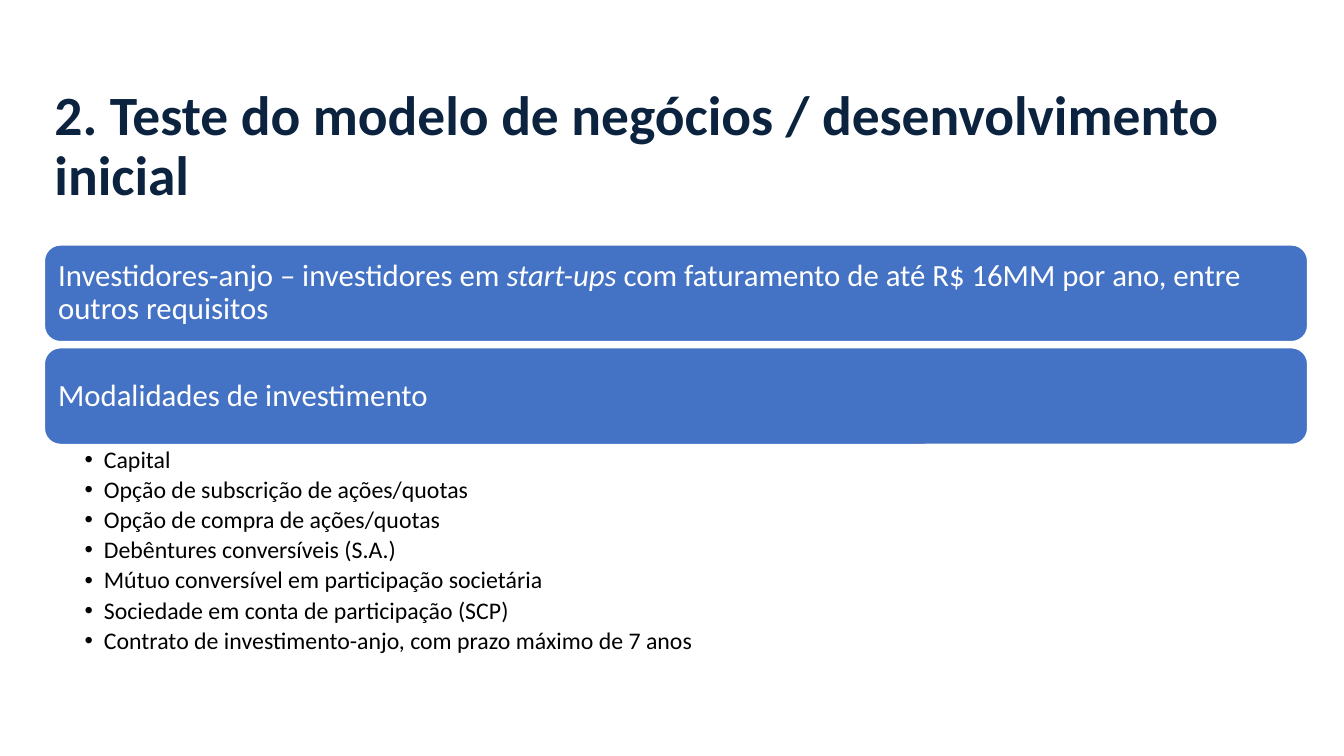
from dataclasses import dataclass

from lxml.etree import SubElement
from pptx import Presentation
from pptx.dml.color import RGBColor
from pptx.enum.shapes import MSO_SHAPE as Preset
from pptx.enum.text import MSO_ANCHOR as Anchor, MSO_AUTO_SIZE as AutoSize, PP_ALIGN as Align
from pptx.oxml.ns import qn
from pptx.util import Inches, Pt

FONT = "Calibri"
NAVY, BLUE, WHITE, BLACK = "0B233F", "4472C4", "FFFFFF", "000000"
LEFT, WIDTH = 0.44, 12.53
BAR_TOP, BAR_HEIGHT, BAR_STEP = 2.43, 0.96, 1.02

TITLE = "2. Teste do modelo de negócios / desenvolvimento inicial"
MODALITIES = [
    "Capital",
    "Opção de subscrição de ações/quotas",
    "Opção de compra de ações/quotas",
    "Debêntures conversíveis (S.A.)",
    "Mútuo conversível em participação societária",
    "Sociedade em conta de participação (SCP)",
    "Contrato de investimento-anjo, com prazo máximo de 7 anos",
]


@dataclass
class Span:
    text: str
    italic: bool = False


BARS = [
    [
        Span("Investidores-anjo – investidores em "),
        Span("start-ups", italic=True),
        Span(" com faturamento de até R$ 16MM por ano, entre outros requisitos"),
    ],
    [Span("Modalidades de investimento")],
]


def color(value: str) -> RGBColor:
    return RGBColor.from_string(value)


def place(shape, top: float, height: float) -> None:
    shape.left, shape.top = Inches(LEFT), Inches(top)
    shape.width, shape.height = Inches(WIDTH), Inches(height)


def set_frame(frame, anchor: Anchor, left: float, top: float, right: float, bottom: float) -> None:
    frame.word_wrap = True
    frame.auto_size = AutoSize.NONE
    frame.vertical_anchor = anchor
    frame.margin_left, frame.margin_right = Inches(left), Inches(right)
    frame.margin_top, frame.margin_bottom = Inches(top), Inches(bottom)


def style(para, size: float, text_color: str, after: float = 0, bold: bool = False) -> None:
    para.alignment = Align.LEFT
    para.line_spacing = 0.9
    para.space_before, para.space_after = Pt(0), Pt(after)
    para.font.name, para.font.size, para.font.bold = FONT, Pt(size), bold
    para.font.color.rgb = color(text_color)


def add_bullet(para, indent: float) -> None:
    properties = para._p.get_or_add_pPr()
    properties.set("marL", str(Inches(indent)))
    properties.set("indent", str(-Inches(indent)))
    SubElement(properties, qn("a:buFont"), typeface="Arial")
    SubElement(properties, qn("a:buChar"), char="•")


def fill_title(title) -> None:
    place(title, 0.93, 1.07)
    set_frame(title.text_frame, Anchor.MIDDLE, 0.1, 0.05, 0.1, 0.05)
    title.text_frame.text = TITLE
    style(title.text_frame.paragraphs[0], 39.6, NAVY, bold=True)


def draw_bar(page, top: float, spans: list[Span]) -> None:
    bar = page.shapes.add_shape(Preset.ROUNDED_RECTANGLE, 0, 0, 0, 0)
    place(bar, top, BAR_HEIGHT)
    bar.shadow.inherit = False
    bar.fill.solid()
    bar.fill.fore_color.rgb = color(BLUE)
    bar.line.color.rgb = color(WHITE)
    bar.line.width = Pt(1)
    # The rounded corners already inset the text by 0.05 inch.
    set_frame(bar.text_frame, Anchor.MIDDLE, 0.09, 0.09, 0.09, 0.09)
    para = bar.text_frame.paragraphs[0]
    for span in spans:
        run = para.add_run()
        run.text = span.text
        if span.italic:
            run.font.italic = True
    style(para, 22, WHITE)


def fill_modalities(body) -> None:
    place(body, 4.41, 2.24)
    frame = body.text_frame
    set_frame(frame, Anchor.TOP, 0.4, 0.03, 0.17, 0.03)
    frame.text = "\n".join(MODALITIES)
    for para in frame.paragraphs:
        para.level = 1
        add_bullet(para, 0.19)
        style(para, 17, BLACK, after=3.2)


def main() -> None:
    deck = Presentation()
    deck.slide_width, deck.slide_height = Inches(13.33), Inches(7.5)
    page = deck.slides.add_slide(deck.slide_layouts[1])
    fill_title(page.shapes.title)
    for index, spans in enumerate(BARS):
        draw_bar(page, BAR_TOP + index * BAR_STEP, spans)
    fill_modalities(page.placeholders[1])
    deck.save("out.pptx")


if __name__ == "__main__":
    main()
